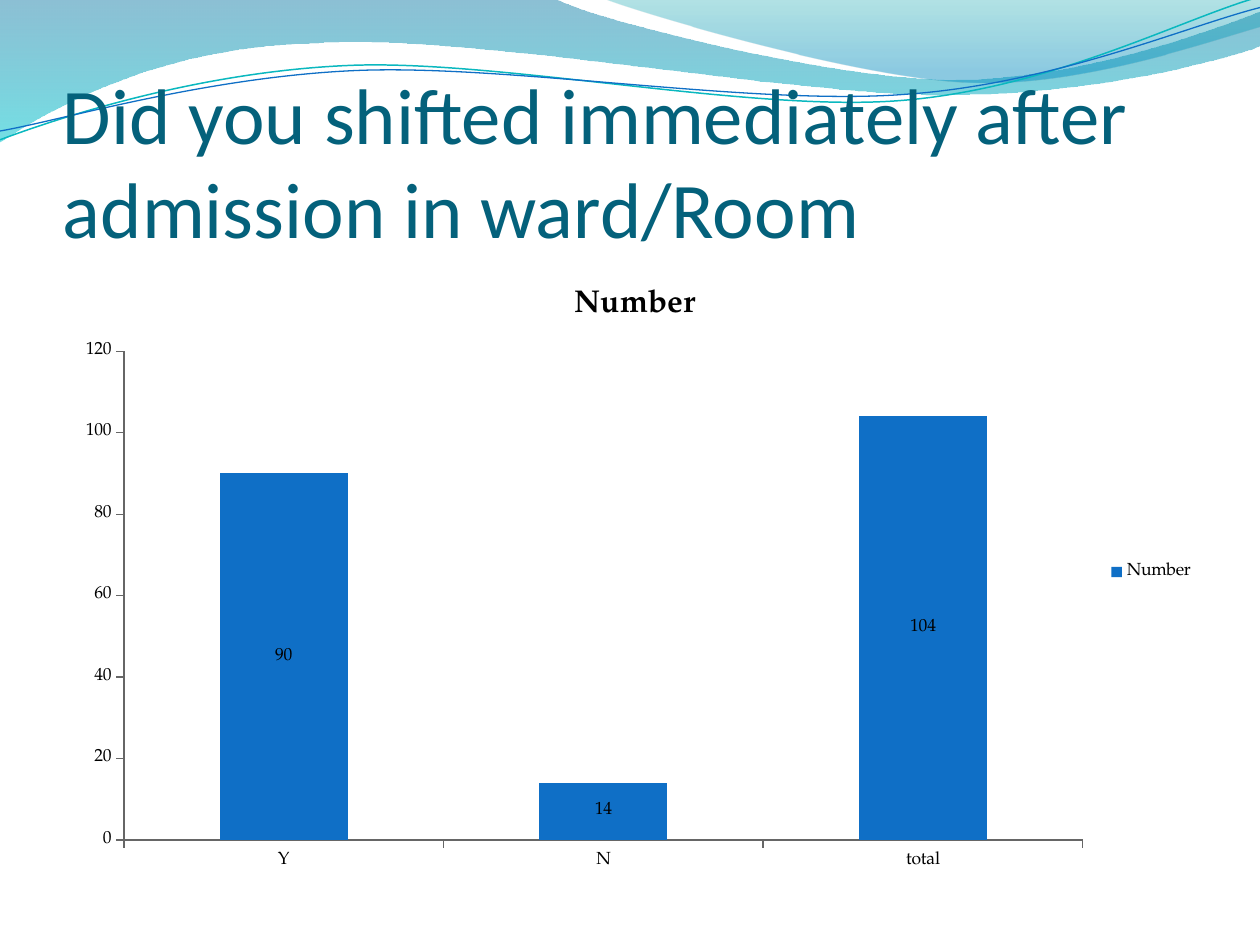
from dataclasses import dataclass

from lxml import etree
from pptx import Presentation
from pptx.chart.data import CategoryChartData
from pptx.dml.color import RGBColor
from pptx.enum.chart import XL_CHART_TYPE, XL_LABEL_POSITION, XL_LEGEND_POSITION, XL_TICK_MARK
from pptx.enum.text import MSO_ANCHOR
from pptx.oxml.ns import qn
from pptx.util import Inches, Pt

STACKED = XL_CHART_TYPE.COLUMN_STACKED
LABEL_CENTER = XL_LABEL_POSITION.CENTER
LEGEND_RIGHT = XL_LEGEND_POSITION.RIGHT
TICK_OUTSIDE = XL_TICK_MARK.OUTSIDE
ANCHOR_BOTTOM = MSO_ANCHOR.BOTTOM


@dataclass(frozen=True)
class Theme:
    title_font: str = "Calibri"
    chart_font: str = "TeX Gyre Pagella"
    title_color: str = "04617B"
    text_color: str = "000000"
    bar_color: str = "0F6FC6"
    axis_color: str = "666666"
    teal_line: str = "0AB8BF"
    blue_line: str = "0F6FC6"
    # Gradient stops: position, colour, opacity in percent
    wide_wave: tuple = ((0, "0074A1", 45), (1, "00C6CF", 55))
    corner_wave: tuple = ((0, "00A1A9", 30), (0.8, "008BBF", 45))
    title_size: int = 45
    chart_title_size: int = 18
    chart_size: int = 10


THEME = Theme()

# A pair is a straight step, six numbers are a Bezier curve.
WIDE_WAVE = [
    (0, 0), (4.4, -0.01),
    (4.76, 0.17, 6.64, 0.63, 7.58, 0.63),
    (8.53, 0.63, 9.58, 0.26, 10, 0.09),
    (10.01, 0.36),
    (9.83, 0.44, 8.7, 0.76, 7.46, 0.75),
    (6.22, 0.75, 3.82, 0.28, 2.57, 0.34),
    (1.29, 0.36, 0.46, 0.83, -0.01, 1.13),
    (0, 0),
]
CORNER_WAVE = [
    (4.79, -0.01),
    (5.09, 0.11, 6.82, 0.62, 7.69, 0.65),
    (8.56, 0.69, 9.61, 0.32, 10, 0.21),
    (10, 0), (4.79, -0.01),
]
TEAL_CURVE = [
    (0, 1.11),
    (0.48, 0.93, 1.58, 0.57, 2.77, 0.52),
    (3.95, 0.47, 5.93, 0.89, 7.13, 0.8),
    (8.33, 0.71, 9.38, 0.15, 9.98, -0.02),
]
BLUE_CURVE = [
    (0, 1.04),
    (0.47, 0.96, 1.64, 0.61, 2.83, 0.56),
    (4.03, 0.51, 5.97, 0.84, 7.17, 0.75),
    (8.36, 0.67, 9.41, 0.21, 10, 0.06),
]


def rgb(value):
    return RGBColor.from_string(value)


def add_outline(slide, outline, closed):
    """Draw the steps as a freeform, merging each curve's three points into a Bezier."""
    start, *points = [
        (Inches(x), Inches(y))
        for step in outline
        for x, y in zip(step[::2], step[1::2])
    ]
    builder = slide.shapes.build_freeform(*start)
    builder.add_line_segments(points, close=closed)
    shape = builder.convert_to_shape()
    shape.shadow.inherit = False

    segments = iter(list(shape._element.iter(qn("a:lnTo"))))
    for step in outline[1:]:
        segment = next(segments)
        if len(step) == 6:
            segment_path = segment.getparent()
            curve = etree.Element(qn("a:cubicBezTo"))
            segment.addprevious(curve)
            for part in (segment, next(segments), next(segments)):
                curve.append(part[0])
                segment_path.remove(part)
    return shape


def add_wave(slide, outline, stops):
    wave = add_outline(slide, outline, closed=True)
    wave.line.fill.background()
    wave.fill.gradient()
    wave.fill.gradient_angle = 270
    for stop, (position, color, _) in zip(wave.fill.gradient_stops, stops):
        stop.position = position
        stop.color.rgb = rgb(color)
    colors = list(wave._element.spPr.iter(qn("a:srgbClr")))
    for color, (_, _, opacity) in zip(colors, stops):
        etree.SubElement(color, qn("a:alpha"), val=str(opacity * 1000))


def add_curve(slide, outline, color, width):
    curve = add_outline(slide, outline, closed=False)
    curve.fill.background()
    curve.line.color.rgb = rgb(color)
    curve.line.width = Pt(width)


def format_font(font, *, name, size, color, bold=False):
    font.name = name
    font.size = Pt(size)
    font.color.rgb = rgb(color)
    font.bold = bold


def add_text(slide, text, left, top, width, height, *, anchor, **font_format):
    frame = slide.shapes.add_textbox(
        Inches(left), Inches(top), Inches(width), Inches(height)
    ).text_frame
    frame.word_wrap = True
    frame.vertical_anchor = anchor
    frame.margin_left = frame.margin_right = frame.margin_bottom = 0
    frame.margin_top = Inches(0.05)
    run = frame.paragraphs[0].add_run()
    run.text = text
    format_font(run.font, **font_format)


def style_axis(axis):
    axis.has_major_gridlines = False
    axis.major_tick_mark = TICK_OUTSIDE
    axis.format.line.color.rgb = rgb(THEME.axis_color)


def add_answer_chart(slide):
    answers = CategoryChartData()
    answers.categories = ["Y", "N", "total"]
    answers.add_series("Number", [90, 14, 104])
    chart = slide.shapes.add_chart(
        STACKED, Inches(0.5), Inches(2.08), Inches(9.08), Inches(4.92), answers
    ).chart
    chart_format = {"name": THEME.chart_font, "color": THEME.text_color}
    format_font(chart.font, size=THEME.chart_size, **chart_format)

    chart.has_title = True
    heading = chart.chart_title.text_frame.paragraphs[0].add_run()
    heading.text = "Number"
    format_font(heading.font, size=THEME.chart_title_size, bold=True, **chart_format)

    chart.has_legend = True
    chart.legend.position = LEGEND_RIGHT
    chart.legend.include_in_layout = False
    style_axis(chart.category_axis)
    style_axis(chart.value_axis)

    bars = chart.plots[0]
    bars.vary_by_categories = False
    bars.gap_width = 150
    bars.overlap = 100
    bars.has_data_labels = True
    bars.data_labels.show_value = True
    bars.data_labels.position = LABEL_CENTER
    fill = bars.series[0].format.fill
    fill.solid()
    fill.fore_color.rgb = rgb(THEME.bar_color)


def main():
    deck = Presentation()
    deck.slide_width, deck.slide_height = Inches(10), Inches(7.5)
    slide = deck.slides.add_slide(deck.slide_layouts[6])
    add_wave(slide, WIDE_WAVE, THEME.wide_wave)
    add_wave(slide, CORNER_WAVE, THEME.corner_wave)
    add_curve(slide, TEAL_CURVE, THEME.teal_line, 0.85)
    add_curve(slide, BLUE_CURVE, THEME.blue_line, 0.75)
    add_text(
        slide, "Did you shifted immediately after admission in ward/Room",
        0.5, 0.77, 9, 1.25, anchor=ANCHOR_BOTTOM,
        name=THEME.title_font, size=THEME.title_size, color=THEME.title_color,
    )
    add_answer_chart(slide)
    deck.save("out.pptx")


if __name__ == "__main__":
    main()
